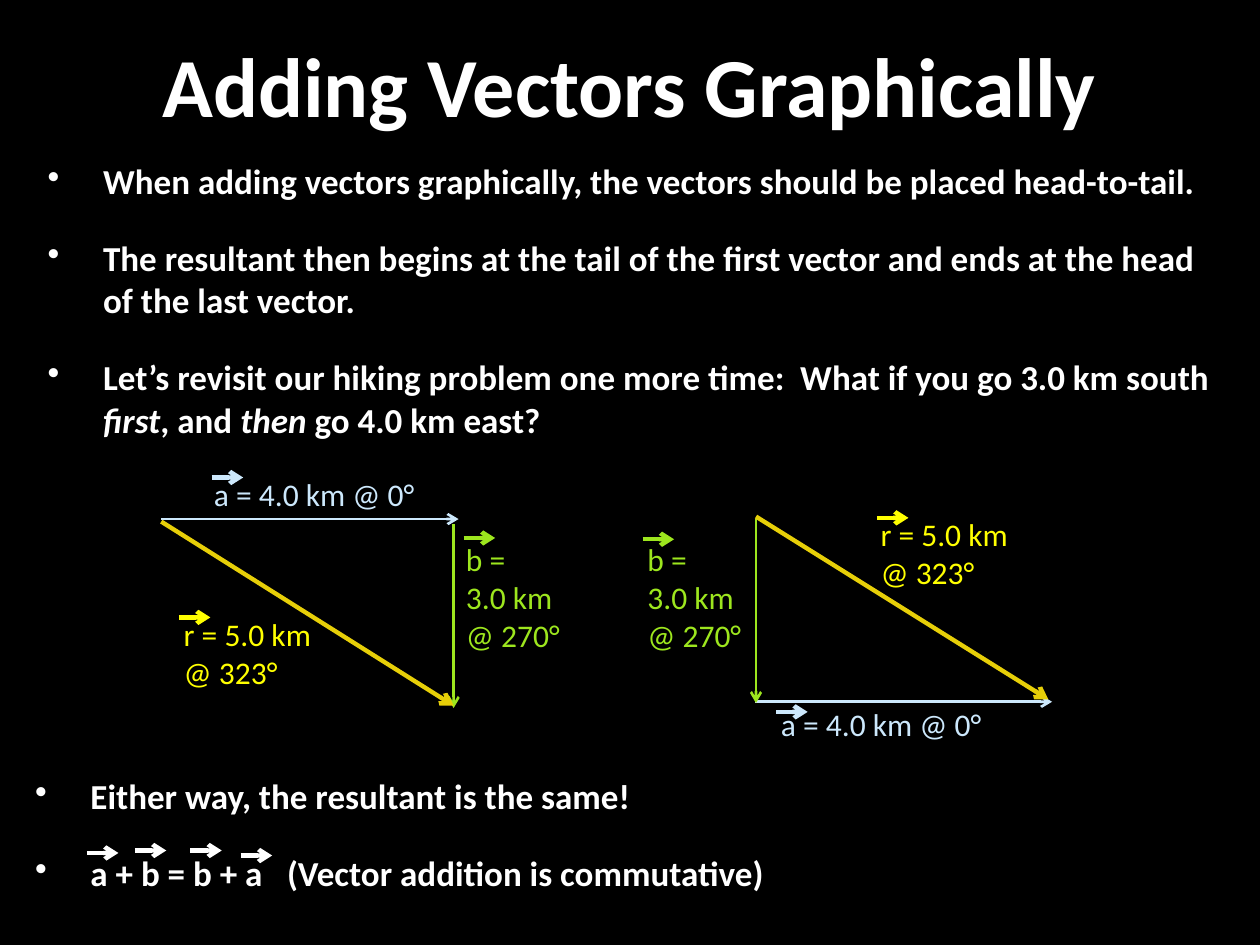
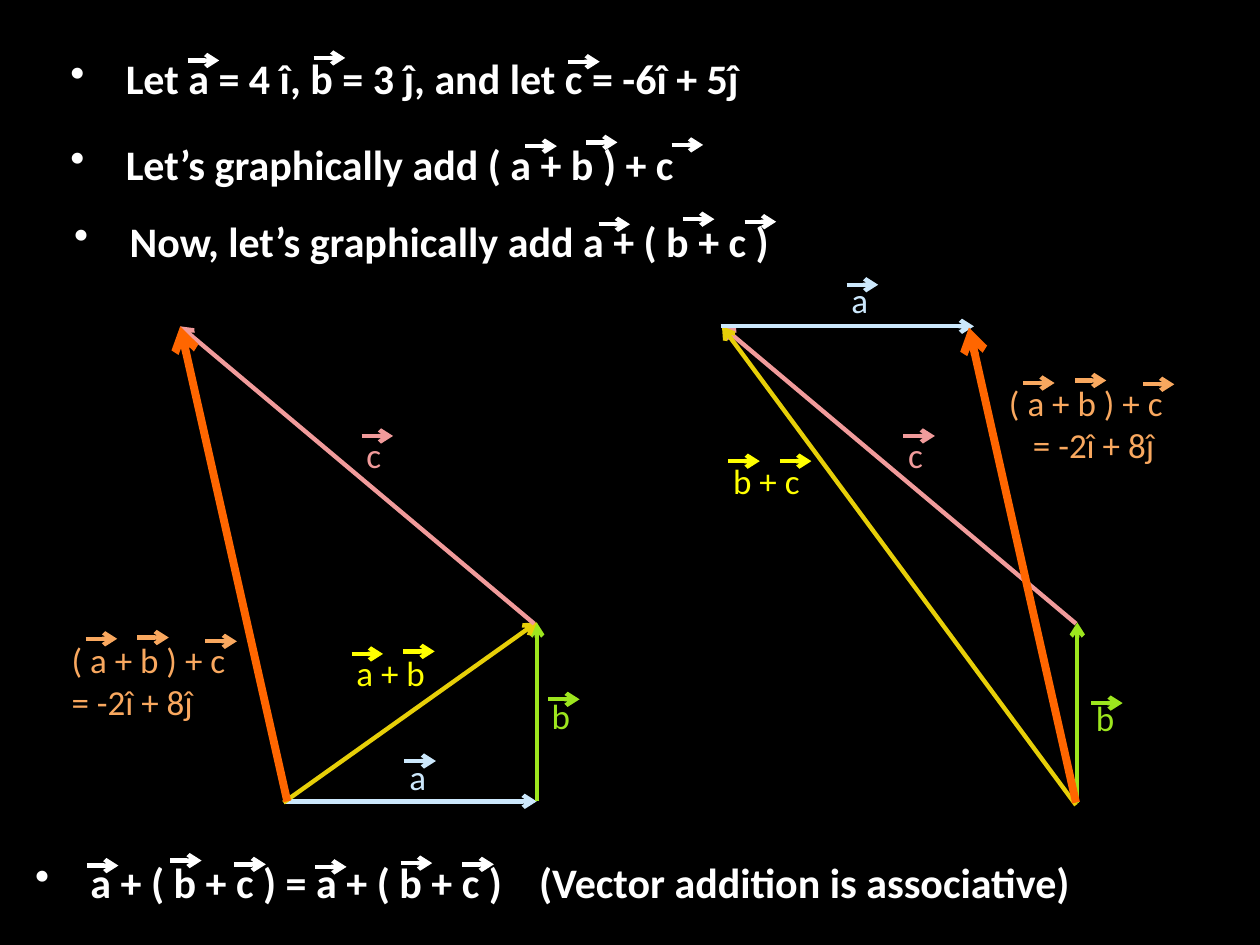
from dataclasses import dataclass

from lxml.etree import SubElement
from pptx import Presentation
from pptx.dml.color import RGBColor
from pptx.enum.shapes import MSO_CONNECTOR
from pptx.enum.text import MSO_ANCHOR, MSO_AUTO_SIZE, PP_ALIGN
from pptx.oxml.ns import qn
from pptx.util import Inches, Pt


@dataclass(frozen=True)
class Theme:
    font: str = "Calibri"
    background: str = "000000"
    text: str = "FFFFFF"
    a: str = "CCE8FC"
    b: str = "9DE61E"
    c: str = "F19B9B"
    partial: str = "E7CF08"
    partial_label: str = "FFFF00"
    total: str = "FF6600"
    total_label: str = "F9A85F"
    title_size: int = 48
    bullet_gap: int = 20
    indent: float = 0.44
    thin: float = 1.5
    medium: float = 2.5
    thick: float = 4.5
    mark_length: float = 0.25


THEME = Theme()

A_TEXT = ["a = 4.0 km @ 0°"]
B_TEXT = ["b =", "3.0 km", "@ 270°"]
R_TEXT = ["r = 5.0 km", "@ 323°"]
TOTAL_TEXT = ["( a + b ) + c", "= -2î + 8ĵ"]

# bullets: box, size, paragraphs (*italic*), places of the vector marks
# vectors: tail, head, colour, width
# labels: box, lines, colour, places of the vector marks, indent of later lines
COMMUTATIVE = {
    "title": "Adding Vectors Graphically",
    "label_size": 18,
    "bullets": [
        ((0.28, 1.22, 9.57, 2.53), 20, [
            "When adding vectors graphically, the vectors should be placed head-to-tail.",
            "The resultant then begins at the tail of the first vector and ends at the head "
            "of the last vector.",
            "Let’s revisit our hiking problem one more time:  What if you go 3.0 km south "
            "*first*, and *then* go 4.0 km east?",
        ], []),
        ((0.18, 6.1, 9.57, 1.27), 20, [
            "Either way, the resultant is the same!",
            "a + b = b + a\t(Vector addition is commutative)",
        ], [(0.69, 6.77), (1.07, 6.75), (1.51, 6.75), (1.91, 6.79)]),
    ],
    "vectors": [
        ((1.28, 4.12), (3.64, 4.12), THEME.a, THEME.thin),
        ((3.6, 4.16), (3.6, 5.62), THEME.b, THEME.thin),
        ((1.28, 4.14), (3.6, 5.6), THEME.partial, THEME.medium),
        ((5.99, 5.57), (8.35, 5.57), THEME.a, THEME.thin),
        ((6, 4.12), (6, 5.58), THEME.b, THEME.thin),
        ((6, 4.1), (8.32, 5.55), THEME.partial, THEME.medium),
    ],
    "labels": [
        ((1.6, 3.72, 1.87, 0.4), A_TEXT, THEME.a, [(1.68, 3.79)], 0),
        ((3.6, 4.24, 0.96, 1.01), B_TEXT, THEME.b, [(3.68, 4.27)], 0),
        ((1.36, 4.83, 1.24, 0.71), R_TEXT, THEME.partial_label, [(1.42, 4.9)], 0),
        ((6.1, 5.55, 1.87, 0.4), A_TEXT, THEME.a, [(6.16, 5.65)], 0),
        ((5.04, 4.24, 0.96, 1.01), B_TEXT, THEME.b, [(5.1, 4.28)], 0),
        ((6.89, 4.04, 1.24, 0.71), R_TEXT, THEME.partial_label, [(6.96, 4.11)], 0),
    ],
}

ASSOCIATIVE = {
    "title": None,
    "label_size": 20,
    "bullets": [
        ((0.46, 0.37, 9, 1.29), 24, [
            "Let a = 4 î, b = 3 ĵ, and let c = -6î + 5ĵ",
            "Let’s graphically add ( a + b ) + c",
        ], [(1.49, 0.48), (2.49, 0.46), (4.51, 0.49), (4.17, 1.16), (4.65, 1.13), (5.33, 1.15)]),
        ((0.49, 1.66, 6.12, 0.8), 24, [
            "Now, let’s graphically add a + ( b + c )",
        ], [(4.75, 1.78), (5.42, 1.74), (5.91, 1.76)]),
        ((0.18, 6.75, 9.57, 0.61), 24, [
            "a + ( b + c ) = a + ( b + c )\t(Vector addition is associative)",
        ], [(0.69, 6.87), (1.35, 6.83), (1.86, 6.86), (2.5, 6.88), (3.18, 6.85), (3.67, 6.86)]),
    ],
    "vectors": [
        ((2.25, 6.36), (4.26, 6.36), THEME.a, THEME.medium),
        ((4.26, 6.36), (4.26, 4.94), THEME.b, THEME.medium),
        ((2.25, 6.37), (4.26, 4.94), THEME.partial, THEME.medium),
        ((4.24, 4.95), (1.43, 2.59), THEME.c, THEME.medium),
        ((2.28, 6.36), (1.43, 2.59), THEME.total, THEME.thick),
        ((8.55, 6.37), (8.55, 4.94), THEME.b, THEME.medium),
        ((8.54, 4.95), (5.73, 2.59), THEME.c, THEME.medium),
        ((8.54, 6.39), (5.73, 2.59), THEME.partial, THEME.medium),
        ((5.72, 2.59), (7.73, 2.59), THEME.a, THEME.medium),
        ((8.54, 6.37), (7.69, 2.6), THEME.total, THEME.thick),
    ],
    "labels": [
        ((3.15, 5.95, 0.34, 0.44), ["a"], THEME.a, [(3.21, 6.04)], 0),
        ((4.28, 5.46, 0.36, 0.44), ["b"], THEME.b, [(4.35, 5.55)], 0),
        ((2.73, 5.12, 0.76, 0.44), ["a + b"], THEME.partial_label,
         [(2.79, 5.19), (3.2, 5.17)], 0),
        ((2.81, 3.39, 0.33, 0.44), ["c"], THEME.c, [(2.87, 3.46)], 0),
        ((0.47, 5.02, 1.47, 0.77), TOTAL_TEXT, THEME.total_label,
         [(0.68, 5.07), (1.09, 5.06), (1.63, 5.09)], 0),
        ((8.6, 5.48, 0.36, 0.44), ["b"], THEME.b, [(8.66, 5.58)], 0),
        ((7.11, 3.39, 0.33, 0.44), ["c"], THEME.c, [(7.17, 3.46)], 0),
        ((5.72, 3.6, 0.78, 0.44), ["b + c"], THEME.partial_label,
         [(5.78, 3.66), (6.19, 3.66)], 0),
        ((6.66, 2.16, 0.34, 0.44), ["a"], THEME.a, [(6.72, 2.26)], 0),
        ((7.91, 2.98, 1.47, 0.77), TOTAL_TEXT, THEME.total_label,
         [(8.12, 3.04), (8.53, 3.02), (9.07, 3.05)], 0.19),
    ],
}


def add_text(slide, box, lines, size, color, bold=False):
    """Add a text box; words between asterisks become italic."""
    frame = slide.shapes.add_textbox(*map(Inches, box)).text_frame
    frame.word_wrap = True
    for index, line in enumerate(lines):
        paragraph = frame.add_paragraph() if index else frame.paragraphs[0]
        for part_index, part in enumerate(line.split("*")):
            run = paragraph.add_run()
            run.text = part
            run.font.name = THEME.font
            run.font.size = Pt(size)
            run.font.bold = bold
            run.font.italic = part_index % 2 == 1
            run.font.color.rgb = RGBColor.from_string(color)
    return frame


def set_indent(paragraph, left, first=0):
    properties = paragraph._p.get_or_add_pPr()
    properties.set("marL", str(Inches(left)))
    properties.set("indent", str(Inches(first)))
    return properties


def add_vector(slide, tail, head, color, width):
    vector = slide.shapes.add_connector(MSO_CONNECTOR.STRAIGHT, *map(Inches, (*tail, *head)))
    vector.line.color.rgb = RGBColor.from_string(color)
    vector.line.width = Pt(width)
    SubElement(vector.line._get_or_add_ln(), qn("a:tailEnd"), type="arrow")
    SubElement(vector._element.spPr, qn("a:effectLst"))


def add_marks(slide, places, color):
    """Draw the small arrows above vector names."""
    for x, y in places:
        add_vector(slide, (x, y), (x + THEME.mark_length, y), color, THEME.medium)


def add_title(slide, title):
    frame = add_text(slide, (0.85, 0.12, 8.29, 1.1), [title], THEME.title_size, THEME.text, True)
    frame.vertical_anchor = MSO_ANCHOR.MIDDLE
    frame.paragraphs[0].alignment = PP_ALIGN.CENTER


def add_bullets(slide, box, size, lines, marks):
    frame = add_text(slide, box, lines, size, THEME.text, True)
    for index, paragraph in enumerate(frame.paragraphs):
        properties = set_indent(paragraph, THEME.indent, -THEME.indent)
        SubElement(properties, qn("a:buChar"), char="•")
        if index:
            paragraph.space_before = Pt(THEME.bullet_gap)
    add_marks(slide, marks, THEME.text)


def add_label(slide, size, box, lines, color, marks, later_indent):
    frame = add_text(slide, box, lines, size, color)
    frame.word_wrap = False
    frame.auto_size = MSO_AUTO_SIZE.SHAPE_TO_FIT_TEXT
    if later_indent:
        for paragraph in frame.paragraphs[1:]:
            set_indent(paragraph, later_indent)
    add_marks(slide, marks, color)


def build_slide(deck, content):
    slide = deck.slides.add_slide(deck.slide_layouts[6])
    slide.background.fill.solid()
    slide.background.fill.fore_color.rgb = RGBColor.from_string(THEME.background)
    if content["title"]:
        add_title(slide, content["title"])
    for bullets in content["bullets"]:
        add_bullets(slide, *bullets)
    for vector in content["vectors"]:
        add_vector(slide, *vector)
    for label in content["labels"]:
        add_label(slide, content["label_size"], *label)


def main():
    deck = Presentation()
    deck.slide_width, deck.slide_height = Inches(10), Inches(7.5)
    for content in (COMMUTATIVE, ASSOCIATIVE):
        build_slide(deck, content)
    deck.save("out.pptx")


if __name__ == "__main__":
    main()
